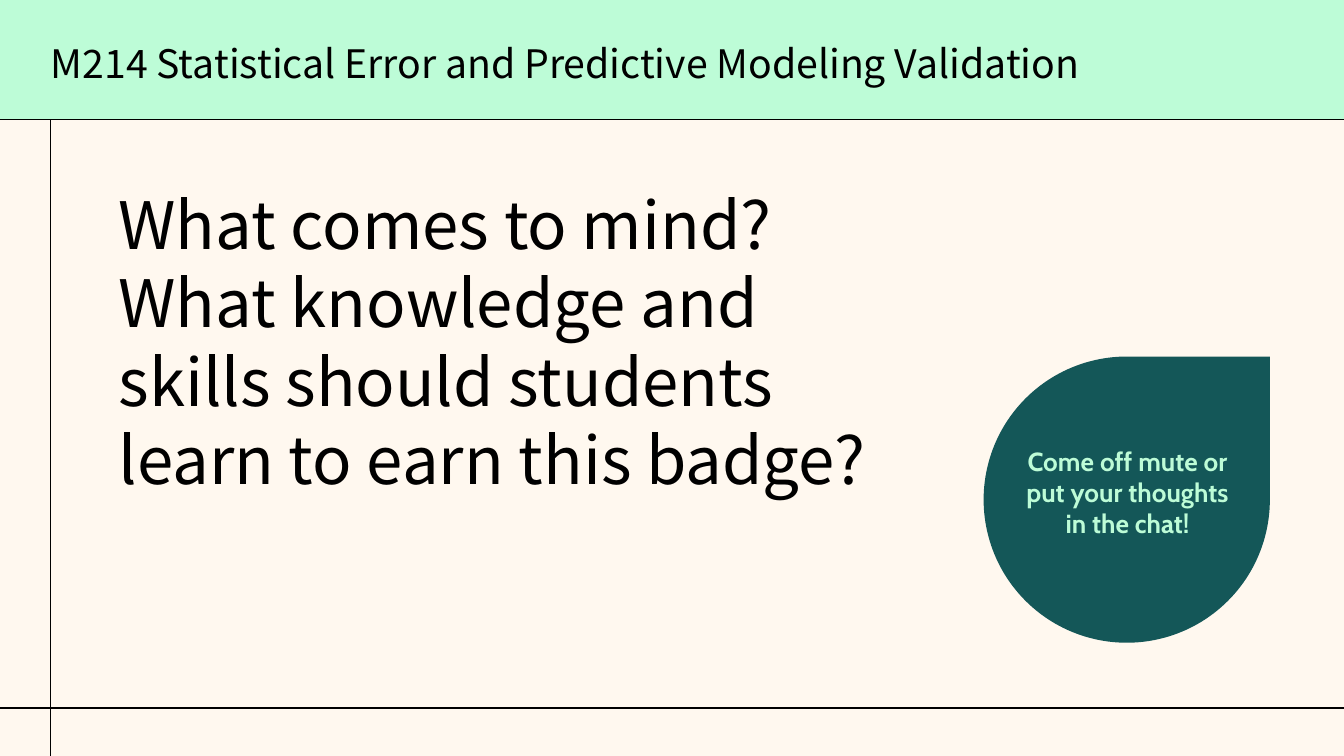
"""Build the badge discussion slide with its header band, rules and chat prompt."""
import dataclasses
import typing

import pptx
import pptx.dml.color
import pptx.enum.shapes
import pptx.enum.text
import pptx.oxml.ns
import pptx.slide
import pptx.util
from lxml import etree

Cm = pptx.util.Cm
Pt = pptx.util.Pt
RGB = pptx.dml.color.RGBColor
Shape = pptx.enum.shapes.MSO_SHAPE
Align = pptx.enum.text.PP_ALIGN


@dataclasses.dataclass(frozen=True)
class Theme:
    """Colours, fonts and sizes of the slide."""

    paper: RGB = RGB(0xFF, 0xF8, 0xEF)
    ink: RGB = RGB(0, 0, 0)
    mint: RGB = RGB(0xBD, 0xFC, 0xD7)
    teal: RGB = RGB(0x14, 0x57, 0x58)
    text_font: str = "Noto Sans CJK KR"
    prompt_font: str = "Cabin"
    title_size: float = 21
    question_size: float = 35
    prompt_size: float = 14
    rule_width: float = 0.75


@dataclasses.dataclass(frozen=True)
class Area:
    """A rectangle in centimetres."""

    left: float
    top: float
    width: float
    height: float

    def lengths(self) -> tuple[int, int, int, int]:
        """Return the rectangle as slide lengths."""
        return Cm(self.left), Cm(self.top), Cm(self.width), Cm(self.height)


@dataclasses.dataclass(frozen=True)
class Rule:
    """A straight line between two points in centimetres."""

    start: tuple[float, float]
    end: tuple[float, float]


THEME = Theme()
WIDTH, HEIGHT = 25.4, 14.29
MARGIN, HEADER, FOOTER = 0.96, 2.26, 13.38


def add_rule(page: pptx.slide.Slide, rule: Rule) -> None:
    """Draw a thin line without a shadow."""
    line = page.shapes.add_connector(
        pptx.enum.shapes.MSO_CONNECTOR.STRAIGHT,
        *(Cm(value) for value in rule.start + rule.end),
    )
    line.line.color.rgb = THEME.ink
    line.line.width = Pt(THEME.rule_width)
    etree.SubElement(line._element.spPr, pptx.oxml.ns.qn("a:effectLst"))


def add_block(page: pptx.slide.Slide, kind: Shape, area: Area, fill: RGB) -> None:
    """Draw a filled shape without an outline."""
    block = page.shapes.add_shape(kind, *area.lengths())
    block.shadow.inherit = False
    block.fill.solid()
    block.fill.fore_color.rgb = fill
    block.line.fill.background()


def add_text(
    page: pptx.slide.Slide,
    text: str,
    area: Area,
    *,
    size: float,
    font: str = THEME.text_font,
    color: RGB = THEME.ink,
    bold: bool = False,
    align: Align = Align.LEFT,
    line_height: typing.Optional[float] = None,
) -> None:
    """Write one wrapped paragraph in a box without margins."""
    box = page.shapes.add_textbox(*area.lengths())
    frame = box.text_frame
    frame.word_wrap = True
    frame.margin_left = frame.margin_right = 0
    frame.margin_top = frame.margin_bottom = 0
    para = frame.paragraphs[0]
    para.text = text
    para.alignment = align
    if line_height is not None:
        para.line_spacing = Pt(line_height)
    for span in para.runs:
        span.font.name = font
        span.font.size = Pt(size)
        span.font.bold = bold
        span.font.color.rgb = color


def main() -> None:
    """Compose the slide and save it."""
    deck = pptx.Presentation()
    deck.slide_width, deck.slide_height = Cm(WIDTH), Cm(HEIGHT)
    page = deck.slides.add_slide(deck.slide_layouts[6])
    page.background.fill.solid()
    page.background.fill.fore_color.rgb = THEME.paper

    add_rule(page, Rule((MARGIN, 0), (MARGIN, HEIGHT)))
    add_block(page, Shape.RECTANGLE, Area(0, 0, WIDTH, HEADER), THEME.mint)
    for height in (HEADER, FOOTER):
        add_rule(page, Rule((WIDTH, height), (0, height)))
    add_block(page, Shape.TEAR, Area(18.59, 6.74, 5.41, 5.41), THEME.teal)

    add_text(
        page,
        "M214 Statistical Error and Predictive Modeling Validation",
        Area(MARGIN, 0.76, 20.7, 0.81),
        size=THEME.title_size,
        line_height=24.6,
    )
    add_text(
        page,
        "What comes to mind?\n"
        "What knowledge and skills should students learn to earn this badge?",
        Area(2.24, 3.48, 15.06, 5.99),
        size=THEME.question_size,
        line_height=42,
    )
    add_text(
        page,
        "Come off mute or put your thoughts in the chat!",
        Area(19.38, 8.41, 3.86, 2.39),
        size=THEME.prompt_size,
        font=THEME.prompt_font,
        color=THEME.mint,
        bold=True,
        align=Align.CENTER,
    )
    deck.save("out.pptx")


if __name__ == "__main__":
    main()
